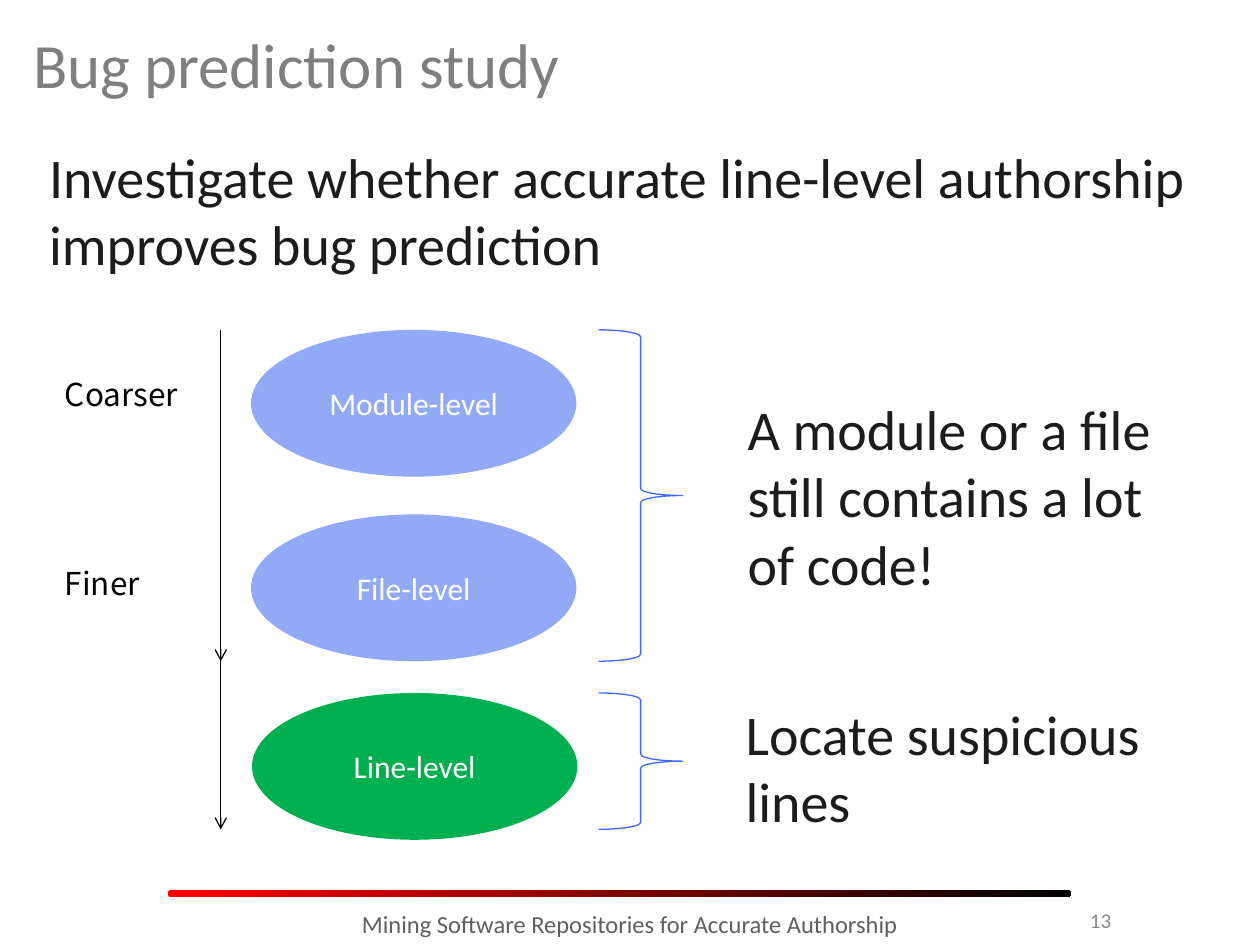
from lxml import etree
from pptx import Presentation
from pptx.dml.color import RGBColor
from pptx.enum.shapes import MSO_CONNECTOR, MSO_SHAPE
from pptx.enum.text import MSO_ANCHOR, PP_ALIGN
from pptx.oxml.ns import qn
from pptx.util import Cm, Pt

LEFT, CENTER, RIGHT = PP_ALIGN.LEFT, PP_ALIGN.CENTER, PP_ALIGN.RIGHT
TOP, MIDDLE = MSO_ANCHOR.TOP, MSO_ANCHOR.MIDDLE
ELLIPSE, BRACE = MSO_SHAPE.OVAL, MSO_SHAPE.RIGHT_BRACE
ROUNDED = MSO_SHAPE.ROUNDED_RECTANGLE
STRAIGHT = MSO_CONNECTOR.STRAIGHT

BLACK = RGBColor(0x00, 0x00, 0x00)
WHITE = RGBColor(0xFF, 0xFF, 0xFF)
RED = RGBColor(0xFF, 0x00, 0x00)
TITLE_GRAY = RGBColor(0x7F, 0x7F, 0x7F)
NUMBER_GRAY = RGBColor(0x89, 0x89, 0x89)
FOOTER_GRAY = RGBColor(0x5F, 0x5F, 0x5F)
INK = RGBColor(0x1C, 0x1C, 0x1C)
PALE_BLUE = RGBColor(0x92, 0xAA, 0xF6)
GREEN = RGBColor(0x00, 0xB0, 0x50)
BRACE_BLUE = RGBColor(0x3B, 0x6A, 0xFF)

BODY_FONT = "Calibri"
LABEL_FONT = "Noto Sans CJK JP"

# Vertical extents shared by the ellipses, arrows and braces
LEVELS_TOP = 6.65
FILE_BOTTOM = 13.33
LINE_TOP = 13.97
LINE_BOTTOM = 16.72


def write_text(shape, text, size, color, align=LEFT, anchor=TOP, font=BODY_FONT):
    frame = shape.text_frame
    frame.word_wrap = True
    frame.vertical_anchor = anchor
    frame.text = text
    paragraph = frame.paragraphs[0]
    paragraph.alignment = align
    run_font = paragraph.runs[0].font
    run_font.name = font
    run_font.size = Pt(size)
    run_font.color.rgb = color


def add_text(slide, box, text, size, color, **style):
    shape = slide.shapes.add_textbox(*(Cm(length) for length in box))
    write_text(shape, text, size, color, **style)


def add_plain_shape(slide, preset, box):
    shape = slide.shapes.add_shape(preset, *(Cm(length) for length in box))
    shape.shadow.inherit = False
    shape.line.fill.background()
    return shape


def add_level(slide, left, top, text, color):
    ellipse = add_plain_shape(slide, ELLIPSE, (left, top, 6.56, 2.96))
    ellipse.fill.solid()
    ellipse.fill.fore_color.rgb = color
    write_text(ellipse, text, 18, WHITE, align=CENTER, anchor=MIDDLE)


def add_brace(slide, top, bottom):
    brace = add_plain_shape(slide, BRACE, (12.07, top, 1.69, bottom - top))
    brace.fill.background()
    brace.line.color.rgb = BRACE_BLUE
    brace.line.width = Pt(0.75)


def add_down_arrow(slide, x, top, bottom):
    arrow = slide.shapes.add_connector(STRAIGHT, Cm(x), Cm(top), Cm(x), Cm(bottom))
    arrow.line.color.rgb = BLACK
    arrow.line.width = Pt(0.75)
    etree.SubElement(arrow.line._get_or_add_ln(), qn("a:tailEnd"), type="arrow")
    etree.SubElement(arrow._element.spPr, qn("a:effectLst"))


def add_footer(slide):
    bar = add_plain_shape(slide, ROUNDED, (3.39, 17.94, 18.2, 0.15))
    bar.adjustments[0] = 0.33
    bar.fill.gradient()
    bar.fill.gradient_angle = 0
    for stop, color in zip(bar.fill.gradient_stops, (RED, BLACK)):
        stop.color.rgb = color
    add_text(slide, (19.26, 18.03, 3.39, 1.02), "13", 12, NUMBER_GRAY,
             align=RIGHT, anchor=MIDDLE)
    add_text(slide, (6.14, 18.2, 13.12, 1.02),
             "Mining Software Repositories for Accurate Authorship",
             14, FOOTER_GRAY, align=CENTER)


def main():
    presentation = Presentation()
    presentation.slide_width, presentation.slide_height = Cm(25.4), Cm(19.05)
    slide = presentation.slides.add_slide(presentation.slide_layouts[6])

    add_footer(slide)

    # Title and statement
    add_text(slide, (0.42, 0.21, 24.55, 2.12), "Bug prediction study",
             36, TITLE_GRAY, anchor=MIDDLE)
    add_text(slide, (0.74, 2.75, 24.34, 3.39),
             "Investigate whether accurate line-level authorship "
             "improves bug prediction", 32, INK)

    # Prediction levels
    add_level(slide, 5.06, LEVELS_TOP, "Module-level", PALE_BLUE)
    add_level(slide, 5.06, 10.37, "File-level", PALE_BLUE)
    add_level(slide, 5.08, LINE_TOP, "Line-level", GREEN)

    # Granularity scale
    for bottom in (FILE_BOTTOM, LINE_BOTTOM):
        add_down_arrow(slide, 4.45, LEVELS_TOP, bottom)
    for top, label in ((7.44, "Coarser"), (11.25, "Finer")):
        add_text(slide, (1.06, top, 2.96, 1.03), label, 18, BLACK, font=LABEL_FONT)

    # Braces and remarks
    add_brace(slide, LEVELS_TOP, FILE_BOTTOM)
    add_brace(slide, LINE_TOP, LINE_BOTTOM)
    add_text(slide, (14.82, 7.83, 9.1, 4.02),
             "A module or a file still contains a lot of code!", 32, INK)
    add_text(slide, (14.78, LINE_TOP, 9.1, 3.18), "Locate suspicious lines", 32, INK)

    presentation.save("out.pptx")


if __name__ == "__main__":
    main()
